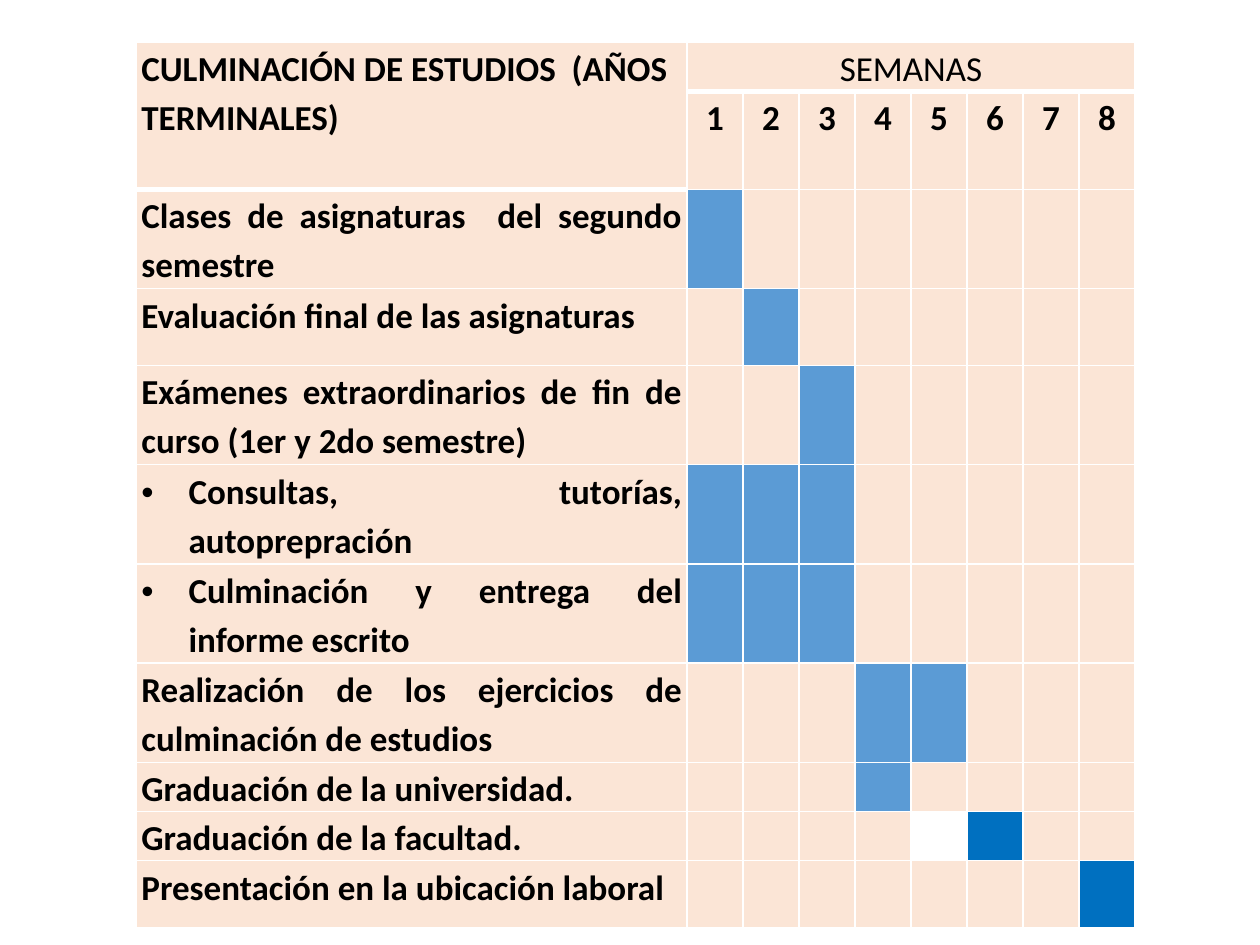
from lxml.etree import SubElement
from pptx import Presentation
from pptx.dml.color import RGBColor
from pptx.enum.text import PP_ALIGN
from pptx.oxml.ns import qn
from pptx.util import Cm, Pt

HUES = {"base": "FBE5D6", "bar": "5B9BD5", "dark": "0070C0",
        "white": "FFFFFF", "text": "000000"}
EDGES = {"margin_left": Cm(0.1), "margin_right": Cm(0.1),
         "margin_top": 0, "margin_bottom": 0}
FONT = {"name": "Calibri", "size": Pt(20), "bold": True}
WEEKS = 8
TASKS = [
    ("Clases de asignaturas  del segundo semestre", 2, {1: "bar"}),
    ("Evaluación final de las asignaturas", 1.55, {2: "bar"}),
    ("Exámenes extraordinarios de fin de curso (1er y 2do semestre)", 2, {3: "bar"}),
    ("Consultas, tutorías, autoprepración", 2, dict.fromkeys((1, 2, 3), "bar")),
    ("Culminación y entrega del informe escrito", 2, dict.fromkeys((1, 2, 3), "bar")),
    ("Realización de los ejercicios de culminación de estudios", 2, {4: "bar", 5: "bar"}),
    ("Graduación de la universidad.", 0.99, {4: "bar"}),
    ("Graduación de la facultad.", 0.99, {5: "white", 6: "dark"}),
    ("Presentación en la ubicación laboral", 1.35, {8: "dark"}),
]
LISTED = (3, 4)


def style(cell, hue, sides):
    for key, val in EDGES.items():
        setattr(cell, key, val)
    props = cell._tc.get_or_add_tcPr()
    for side, width in sides.items():
        line = SubElement(props, qn("a:" + side), w=str(Pt(width)))
        fill = SubElement(line, qn("a:solidFill"))
        SubElement(fill, qn("a:srgbClr"), val=HUES["white"])
    cell.fill.solid()
    cell.fill.fore_color.rgb = RGBColor.from_string(HUES[hue])


def write(cell, text, align, bold=True):
    para = cell.text_frame.paragraphs[0]
    para.alignment = align
    para.line_spacing = Pt(28)
    run = para.add_run()
    run.text = text
    for key, val in {**FONT, "bold": bold}.items():
        setattr(run.font, key, val)
    run.font.color.rgb = RGBColor.from_string(HUES["text"])
    return para


deck = Presentation()
deck.slide_width, deck.slide_height = Cm(25.4), Cm(19.05)
slide = deck.slides.add_slide(deck.slide_layouts[6])

highs = [0.99, 0.99] + [high for _, high, _ in TASKS]
wides = [11.1] + [1.13] * WEEKS
table = slide.shapes.add_table(len(highs), len(wides), Cm(2.75), Cm(0.85),
                               Cm(sum(wides)), Cm(sum(highs))).table
table.horz_banding = False
for row, high in zip(table.rows, highs):
    row.height = Cm(high)
for col, wide in zip(table.columns, wides):
    col.width = Cm(wide)

for r in range(len(highs)):
    marks = TASKS[r - 2][2] if r > 1 else {}
    for c in range(len(wides)):
        sides = {"lnL": 1, "lnR": 1}
        if r == 0:
            sides["lnT"] = 1
        sides["lnB"] = 3 if r == 0 or (r, c) == (1, 0) else 1
        style(table.cell(r, c), marks.get(c, "base"), sides)

table.cell(0, 0).merge(table.cell(1, 0))
table.cell(0, 1).merge(table.cell(0, WEEKS))
write(table.cell(0, 0), "CULMINACIÓN DE ESTUDIOS  (AÑOS TERMINALES)", PP_ALIGN.LEFT)
write(table.cell(0, 1), "SEMANAS", PP_ALIGN.CENTER, False)
for week in range(1, WEEKS + 1):
    write(table.cell(1, week), str(week), PP_ALIGN.CENTER)

for i, (name, _, _) in enumerate(TASKS):
    para = write(table.cell(i + 2, 0), name, PP_ALIGN.JUSTIFY)
    if i in LISTED:
        props = para._p.get_or_add_pPr()
        props.set("marL", str(Cm(0.95)))
        props.set("indent", str(-Cm(0.95)))
        SubElement(props, qn("a:buFont"), typeface="Arial")
        SubElement(props, qn("a:buChar"), char="•")

deck.save("out.pptx")
